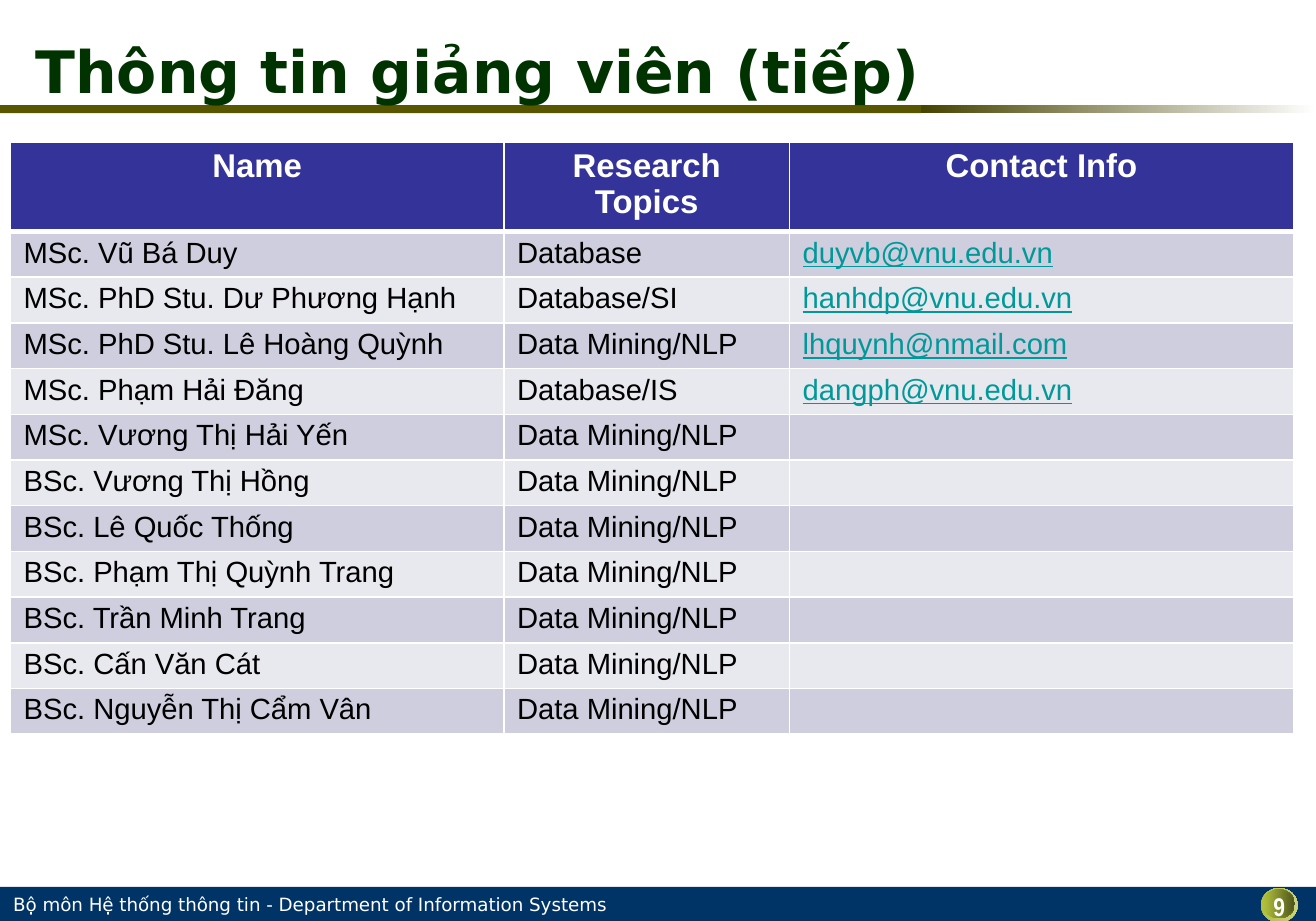
from dataclasses import dataclass

from lxml import etree
from pptx import Presentation
from pptx.dml.color import RGBColor
from pptx.enum.shapes import MSO_SHAPE
from pptx.enum.text import MSO_ANCHOR, PP_ALIGN
from pptx.oxml.ns import qn
from pptx.util import Inches, Pt

RECT, OVAL = MSO_SHAPE.RECTANGLE, MSO_SHAPE.OVAL
LEFT, CENTER = PP_ALIGN.LEFT, PP_ALIGN.CENTER
TOP, MIDDLE = MSO_ANCHOR.TOP, MSO_ANCHOR.MIDDLE


@dataclass(frozen=True)
class Theme:
    sans: str = "DejaVu Sans"
    body: str = "Arial"
    narrow: str = "Arial Narrow"
    white: str = "FFFFFF"
    black: str = "000000"
    title: str = "003300"
    olive: str = "585600"
    fade: str = "464400"
    navy: str = "003366"
    head: str = "333399"
    bands: tuple = ("CECEDE", "E8E8EF")
    link: str = "009999"
    lime: str = "AFBE3C"
    title_size: int = 32
    head_size: int = 18
    cell_size: int = 16
    page_size: int = 14
    foot_size: int = 10


class Deck:
    def __init__(self, theme):
        self.theme = theme
        self.file = Presentation()
        self.file.slide_width, self.file.slide_height = Inches(10), Inches(7)
        self.slide = self.file.slides.add_slide(self.file.slide_layouts[6])

    def shape(self, kind, box, first, last=None):
        item = self.slide.shapes.add_shape(kind, *map(Inches, box))
        item.shadow.inherit = False
        item.line.fill.background()
        if last is None:
            item.fill.solid()
            item.fill.fore_color.rgb = RGBColor.from_string(first)
            return
        item.fill.gradient()
        item.fill.gradient_angle = 0
        for stop, color in zip(item.fill.gradient_stops, (first, last)):
            stop.color.rgb = RGBColor.from_string(color)

    def run(self, para, text, font, size, color, bold=False, under=False):
        run = para.add_run()
        run.text = text
        run.font.name, run.font.size = font, Pt(size)
        run.font.bold, run.font.underline = bold, under
        run.font.color.rgb = RGBColor.from_string(color)

    def text(self, box, text, font, size, color, bold=False,
             align=LEFT, anchor=TOP, side=0, edge=0):
        frame = self.slide.shapes.add_textbox(*map(Inches, box)).text_frame
        frame.word_wrap = True
        frame.vertical_anchor = anchor
        frame.margin_left = frame.margin_right = Inches(side)
        frame.margin_top = frame.margin_bottom = Inches(edge)
        para = frame.paragraphs[0]
        para.alignment = align
        self.run(para, text, font, size, color, bold)

    def border(self, cell, base):
        props = cell._tc.get_or_add_tcPr()
        for side in "LRTB":
            width = base if side == "B" else 1
            line = etree.SubElement(props, qn(f"a:ln{side}"), w=str(Pt(width)))
            fill = etree.SubElement(line, qn("a:solidFill"))
            etree.SubElement(fill, qn("a:srgbClr"), val=self.theme.white)

    def cell(self, cell, text, row, col):
        theme = self.theme
        head = row == 0
        link = col == 2 and not head
        self.border(cell, 3 if head else 1)
        cell.fill.solid()
        shade = theme.head if head else theme.bands[(row - 1) % 2]
        cell.fill.fore_color.rgb = RGBColor.from_string(shade)
        cell.margin_top = cell.margin_bottom = Inches(0.04)
        para = cell.text_frame.paragraphs[0]
        para.alignment = CENTER if head else LEFT
        size = theme.head_size if head else theme.cell_size
        color = theme.white if head else theme.link if link else theme.black
        if text:
            self.run(para, text, theme.body, size, color, head, link)
        else:
            etree.SubElement(para._p, qn("a:endParaRPr"), sz=str(size * 100))

    def table(self, left, top, widths, heights, rows):
        box = (left, top, sum(widths), sum(heights))
        grid = self.slide.shapes.add_table(
            len(rows), len(widths), *map(Inches, box)).table
        for col, width in zip(grid.columns, widths):
            col.width = Inches(width)
        for y, (height, row) in enumerate(zip(heights, rows)):
            grid.rows[y].height = Inches(height)
            for x, text in enumerate(row):
                self.cell(grid.cell(y, x), text, y, x)


MINING = "Data Mining/NLP"
STAFF = [
    ("Name", "Research Topics", "Contact Info"),
    ("MSc. Vũ Bá Duy", "Database", "duyvb@vnu.edu.vn"),
    ("MSc. PhD Stu. Dư Phương Hạnh", "Database/SI", "hanhdp@vnu.edu.vn"),
    ("MSc. PhD Stu. Lê Hoàng Quỳnh", MINING, "lhquynh@nmail.com"),
    ("MSc. Phạm Hải Đăng", "Database/IS", "dangph@vnu.edu.vn"),
    ("MSc. Vương Thị Hải Yến", MINING, ""),
    ("BSc. Vương Thị Hồng", MINING, ""),
    ("BSc. Lê Quốc Thống", MINING, ""),
    ("BSc. Phạm Thị Quỳnh Trang", MINING, ""),
    ("BSc. Trần Minh Trang", MINING, ""),
    ("BSc. Cấn Văn Cát", MINING, ""),
    ("BSc. Nguyễn Thị Cẩm Vân", MINING, ""),
]
BADGE = [
    ((9.58, 6.75, 0.28, 0.26), "FFFFFF"),
    ((9.58, 6.75, 0.28, 0.26), "CAD47D"),
    ((9.6, 6.76, 0.24, 0.22), "5F6720"),
    ((9.6, 6.76, 0.24, 0.22), "555C1D"),
    ((9.61, 6.77, 0.22, 0.2), "51581C"),
]


def main():
    theme = Theme()
    deck = Deck(theme)
    deck.shape(RECT, (0, 0.8, 7, 0.06), theme.olive)
    deck.shape(RECT, (7, 0.8, 3, 0.06), theme.fade, theme.white)
    deck.shape(RECT, (0, 6.74, 10, 0.26), theme.navy)
    deck.text((0.08, 6.79, 7.28, 0.17),
              "Bộ môn Hệ thống thông tin - Department of Information Systems",
              theme.sans, theme.foot_size, theme.white, side=0.02)
    for box, color in BADGE:
        deck.shape(OVAL, box, theme.lime, color)
    deck.text((9.47, 6.77, 0.5, 0.23), "9", theme.narrow, theme.page_size,
              theme.white, bold=True, align=CENTER)
    deck.text((0.17, 0.2, 9.58, 0.67), "Thông tin giảng viên (tiếp)",
              theme.sans, theme.title_size, theme.title, bold=True,
              anchor=MIDDLE, side=0.1, edge=0.05)
    count = len(STAFF) - 1
    deck.table(0.08, 1.08, (3.75, 2.17, 3.83),
               [0.66] + [3.82 / count] * count, STAFF)
    deck.file.save("out.pptx")


if __name__ == "__main__":
    main()
